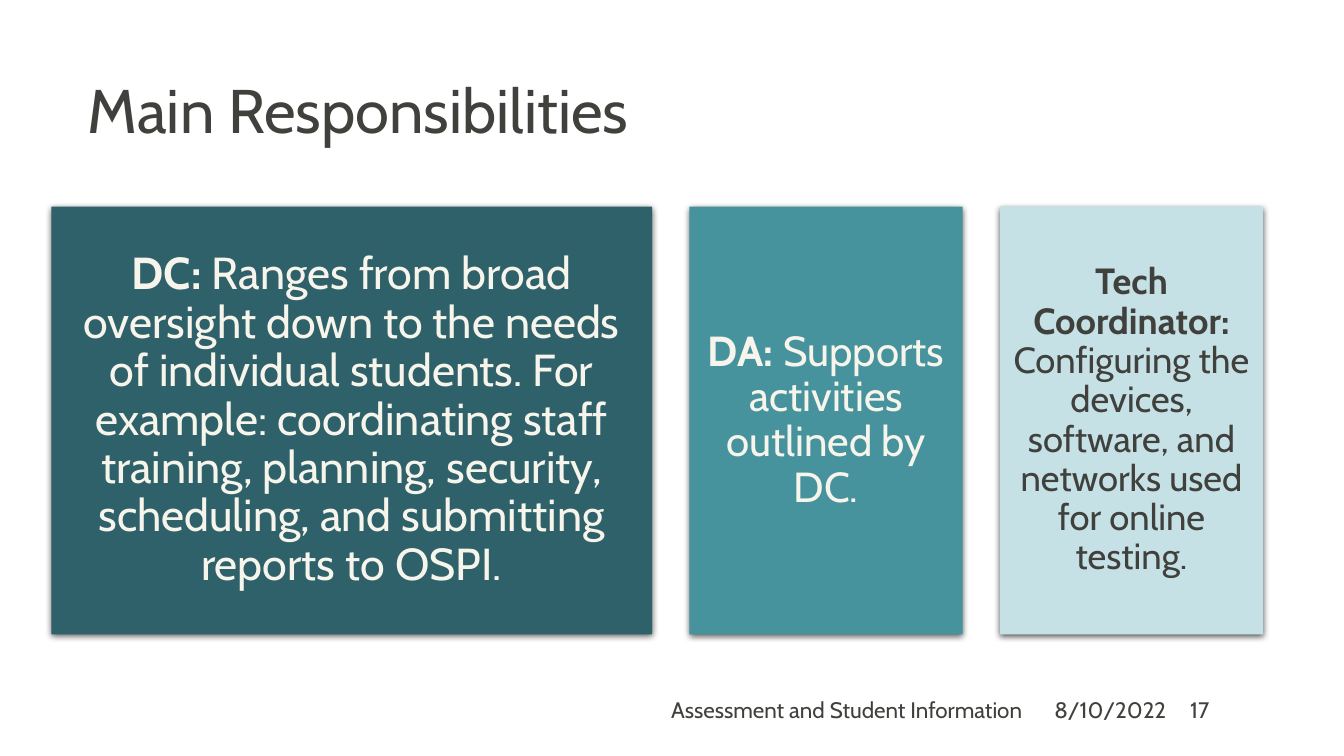
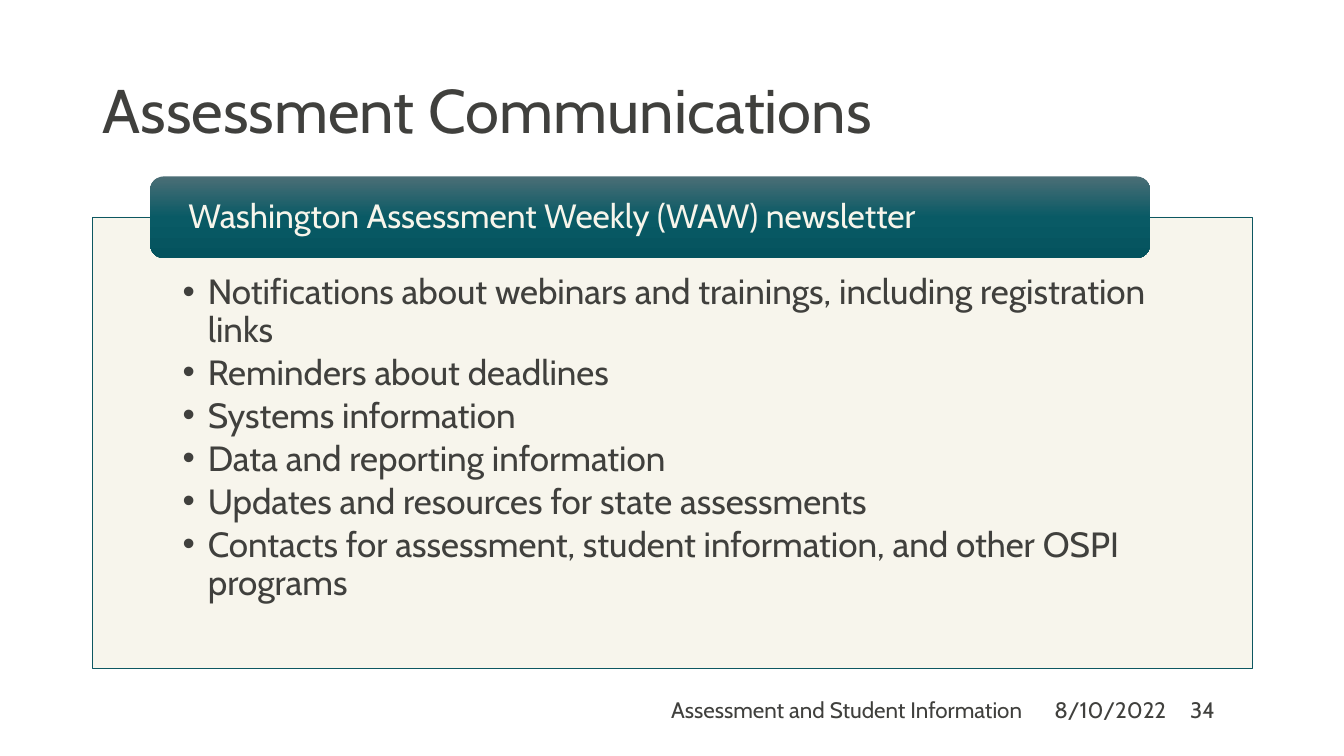
from dataclasses import dataclass

from pptx import Presentation
from pptx.dml.color import RGBColor
from pptx.enum.shapes import MSO_SHAPE
from pptx.enum.text import MSO_ANCHOR, MSO_AUTO_SIZE, PP_ALIGN
from pptx.oxml import parse_xml
from pptx.oxml.ns import nsdecls, qn
from pptx.util import Pt

RECT, ROUND_RECT = MSO_SHAPE.RECTANGLE, MSO_SHAPE.ROUNDED_RECTANGLE
LEFT, CENTER, RIGHT = PP_ALIGN.LEFT, PP_ALIGN.CENTER, PP_ALIGN.RIGHT
TOP, MIDDLE = MSO_ANCHOR.TOP, MSO_ANCHOR.MIDDLE
NO_FIT = MSO_AUTO_SIZE.NONE

FONT = "Cabin"
INK, CREAM, PANEL_LINE = "40403D", "F7F5EB", "0D5761"
BAR_STOPS = ((0, "4B6E76"), (50, "095A65"), (100, "04535E"))
TITLE_ONLY, TITLE_AND_BODY = 5, 1
CARD_LEFT, CARD_TOP, CARD_HEIGHT, CARD_GAP = 36.7, 147.6, 305.6, 26.7
FOOTER_TOP, FOOTER_HEIGHT = 492.5, 28.8


@dataclass
class Card:
    width: float
    fill: str
    ink: str
    size: float
    inset: float
    label: str
    text: str


@dataclass
class FooterPart:
    left: float
    width: float
    align: PP_ALIGN
    text: str


CARDS = (
    Card(429.1, "2E6169", CREAM, 32, 9.6, "DC:",
         " Ranges from broad oversight down to the needs of individual students. "
         "For example: coordinating staff training, planning, security, scheduling, "
         "and submitting reports to OSPI."),
    Card(195.1, "46929D", CREAM, 30, 9, "DA:",
         " Supports activities outlined by DC."),
    Card(187.9, "C5E1E5", INK, 26, 7.8, "Tech Coordinator:",
         " Configuring the devices, software, and networks used for online testing."),
)
TOPICS = (
    "Notifications about webinars and trainings, including registration links",
    "Reminders about deadlines",
    "Systems information",
    "Data and reporting information",
    "Updates and resources for state assessments",
    "Contacts for assessment, student information, and other OSPI programs",
)
FOOTER = (
    FooterPart(279.4, 457.9, RIGHT, "Assessment and Student Information"),
    FooterPart(733, 120.2, CENTER, "8/10/2022"),
)


def rgb(color: str) -> RGBColor:
    return RGBColor.from_string(color)


def place(sp, left: float, top: float, width: float, height: float) -> None:
    sp.left, sp.top, sp.width, sp.height = Pt(left), Pt(top), Pt(width), Pt(height)


def set_frame(tf, anchor, insets=(7.2, 3.6, 7.2, 3.6)) -> None:
    tf.word_wrap = True
    tf.auto_size = NO_FIT
    tf.vertical_anchor = anchor
    tf.margin_left, tf.margin_top, tf.margin_right, tf.margin_bottom = map(Pt, insets)


def set_paragraph(p, align, spacing: float = 0.9, after: float = 0) -> None:
    p.alignment = align
    p.line_spacing = spacing
    p.space_before = Pt(0)
    p.space_after = Pt(after)


def add_run(p, text: str, size: float, color: str, bold: bool = False) -> None:
    r = p.add_run()
    r.text = text
    r.font.name = FONT
    r.font.size = Pt(size)
    r.font.bold = bold
    r.font.color.rgb = rgb(color)


def add_bullet(p, indent: float) -> None:
    pPr = p._p.get_or_add_pPr()
    pPr.set("marL", str(Pt(indent)))
    pPr.set("indent", str(-Pt(indent)))
    pPr.append(parse_xml(f'<a:buChar {nsdecls("a")} char="•"/>'))


def add_box(s, kind, left: float, top: float, width: float, height: float):
    sp = s.shapes.add_shape(kind, Pt(left), Pt(top), Pt(width), Pt(height))
    sp.shadow.inherit = False
    sp.line.fill.background()
    return sp


def add_shadow(sp) -> None:
    sp._element.spPr.find(qn("a:effectLst")).append(parse_xml(
        f'<a:outerShdw {nsdecls("a")} blurRad="{Pt(4.5)}" dist="{Pt(1.5)}" '
        'dir="5400000" algn="ctr" rotWithShape="0">'
        '<a:srgbClr val="000000"><a:alpha val="63000"/></a:srgbClr></a:outerShdw>'))


def set_gradient(sp, stops) -> None:
    gs = "".join(f'<a:gs pos="{pos * 1000}"><a:srgbClr val="{color}"/></a:gs>'
                 for pos, color in stops)
    sp._element.spPr.find(qn("a:prstGeom")).addnext(parse_xml(
        f'<a:gradFill {nsdecls("a")} rotWithShape="1"><a:gsLst>{gs}</a:gsLst>'
        '<a:lin ang="5400000" scaled="0"/></a:gradFill>'))


def add_footer(s, number: int) -> None:
    for part in (*FOOTER, FooterPart(843.1, 50.4, LEFT, str(number))):
        sp = s.shapes.add_textbox(Pt(part.left), Pt(FOOTER_TOP),
                                  Pt(part.width), Pt(FOOTER_HEIGHT))
        set_frame(sp.text_frame, MIDDLE)
        p = sp.text_frame.paragraphs[0]
        set_paragraph(p, part.align, 1, 6)
        add_run(p, part.text, 16, INK)


def add_slide(prs, layout: int, title: str, left: float, number: int):
    s = prs.slides.add_slide(prs.slide_layouts[layout])
    sp = s.shapes.title
    place(sp, left, 28.8, 828, 104.4)
    set_frame(sp.text_frame, MIDDLE)
    p = sp.text_frame.paragraphs[0]
    set_paragraph(p, LEFT)
    add_run(p, title, 44, INK)
    add_footer(s, number)
    return s


def add_cards(s) -> None:
    left = CARD_LEFT
    for card in CARDS:
        sp = add_box(s, RECT, left, CARD_TOP, card.width, CARD_HEIGHT)
        sp.fill.solid()
        sp.fill.fore_color.rgb = rgb(card.fill)
        add_shadow(sp)
        set_frame(sp.text_frame, MIDDLE, (card.inset,) * 4)
        p = sp.text_frame.paragraphs[0]
        set_paragraph(p, CENTER)
        add_run(p, card.label, card.size, card.ink, True)
        add_run(p, card.text, card.size, card.ink)
        left += card.width + CARD_GAP


def add_topic_panel(s) -> None:
    sp = s.placeholders[1]
    place(sp, 66.24, 154.9, 828, 322.4)
    sp.fill.solid()
    sp.fill.fore_color.rgb = rgb(CREAM)
    color = sp._element.spPr.find(qn("a:solidFill")).find(qn("a:srgbClr"))
    color.append(parse_xml(f'<a:alpha {nsdecls("a")} val="90000"/>'))
    sp.line.color.rgb = rgb(PANEL_LINE)
    sp.line.width = Pt(0.5)
    tf = sp.text_frame
    set_frame(tf, TOP, (64.2, 41, 64.2, 13.7))
    for i, topic in enumerate(TOPICS):
        p = tf.add_paragraph() if i else tf.paragraphs[0]
        add_bullet(p, 18)
        set_paragraph(p, LEFT, after=3.75)
        add_run(p, topic, 25, INK)


def add_heading_bar(s, text: str) -> None:
    sp = add_box(s, ROUND_RECT, 107.3, 126, 714.2, 58.3)
    set_gradient(sp, BAR_STOPS)
    set_frame(sp.text_frame, MIDDLE, (24.5, 0, 24.5, 0))
    p = sp.text_frame.paragraphs[0]
    set_paragraph(p, LEFT)
    add_run(p, text, 24, CREAM)


def main() -> None:
    prs = Presentation()
    prs.slide_width, prs.slide_height = Pt(960), Pt(540)
    s = add_slide(prs, TITLE_ONLY, "Main Responsibilities", 55.44, 17)
    add_cards(s)
    s = add_slide(prs, TITLE_AND_BODY, "Assessment Communications", 66.24, 34)
    add_topic_panel(s)
    add_heading_bar(s, "Washington Assessment Weekly (WAW) newsletter")
    prs.save("out.pptx")


if __name__ == "__main__":
    main()
